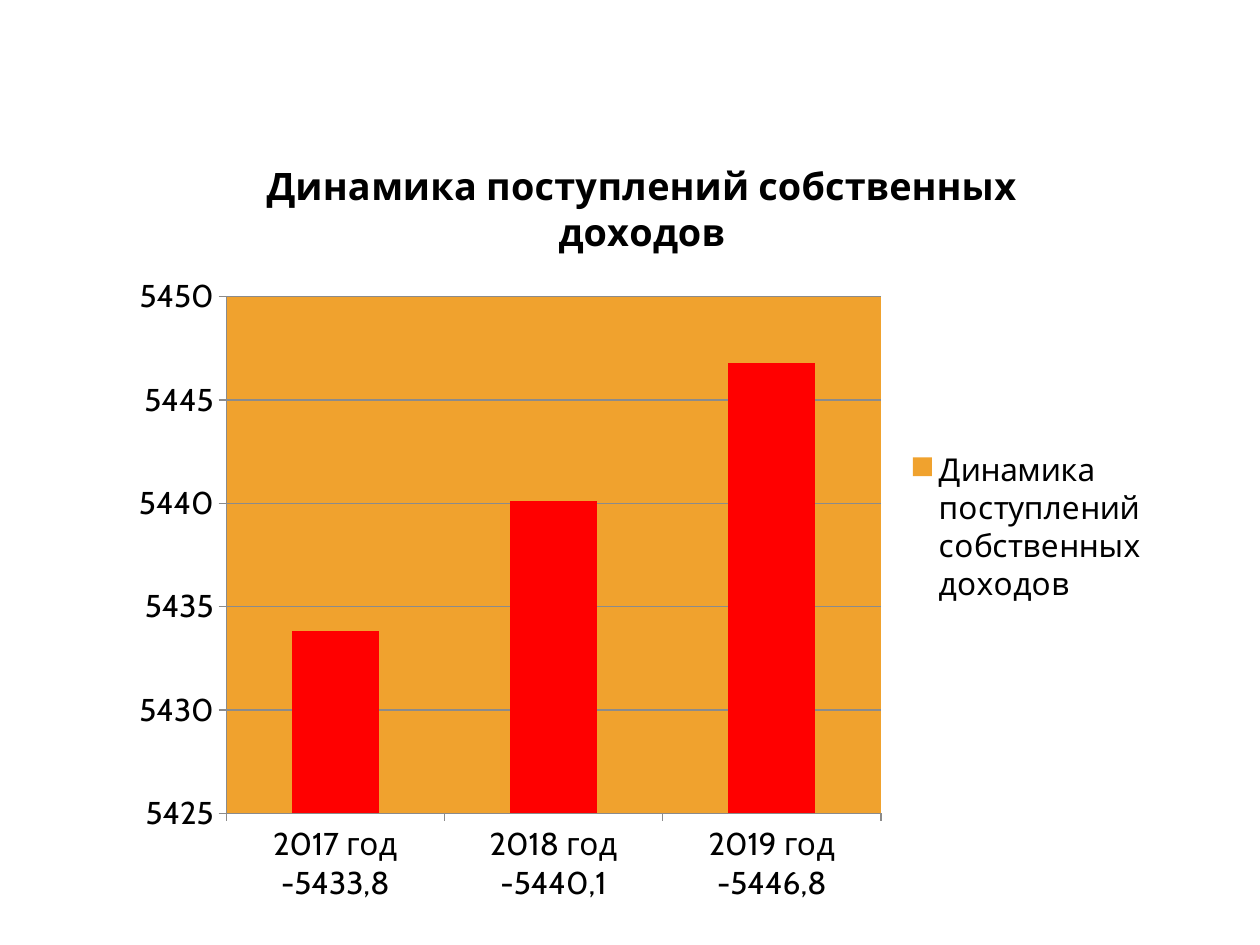
from lxml.etree import SubElement
from pptx import Presentation
from pptx.chart.data import CategoryChartData
from pptx.dml.color import RGBColor
from pptx.enum.chart import XL_CHART_TYPE as ChartType
from pptx.enum.chart import XL_LEGEND_POSITION as LegendPosition
from pptx.enum.chart import XL_TICK_MARK as TickMark
from pptx.oxml import parse_xml
from pptx.oxml.ns import nsdecls, qn
from pptx.util import Inches, Pt

BLACK = RGBColor(0x00, 0x00, 0x00)
RED = RGBColor(0xFF, 0x00, 0x00)
ORANGE = RGBColor(0xF0, 0xA2, 0x2E)
GRAY = RGBColor(0x8B, 0x8B, 0x8B)
FONT_NAME = "Cabin"
TITLE = "Динамика поступлений собственных доходов"
INCOME = {"2017 год": 5433.8, "2018 год": 5440.1, "2019 год": 5446.8}
PLOT_LAYOUT = {"x": 0.1, "y": 0.21, "w": 0.63, "h": 0.65}


def style_font(font, size, bold=False):
    font.name = FONT_NAME
    font.size = Pt(size)
    font.bold = bold
    font.color.rgb = BLACK


def fill_solid(target, color):
    target.format.fill.solid()
    target.format.fill.fore_color.rgb = color


def style_title(chart):
    chart.has_title = True
    chart.chart_title.include_in_layout = False
    paragraph = chart.chart_title.text_frame.paragraphs[0]
    paragraph.text = TITLE
    style_font(paragraph.font, 21.6, bold=True)


def style_axis(axis):
    axis.major_tick_mark = TickMark.OUTSIDE
    axis.minor_tick_mark = TickMark.NONE
    axis.format.line.color.rgb = GRAY
    style_font(axis.tick_labels.font, 18)


def style_axes(chart):
    style_axis(chart.category_axis)
    value_axis = chart.value_axis
    style_axis(value_axis)
    value_axis.minimum_scale = 5425
    value_axis.maximum_scale = 5450
    value_axis.major_unit = 5
    value_axis.has_major_gridlines = True
    value_axis.major_gridlines.format.line.color.rgb = GRAY


def style_legend(chart):
    chart.has_legend = True
    chart.legend.position = LegendPosition.RIGHT
    chart.legend.include_in_layout = False
    style_font(chart.legend.font, 18)


def style_columns(chart):
    plot = chart.plots[0]
    plot.gap_width = 150
    plot.overlap = 100
    plot.vary_by_categories = False
    series = plot.series[0]
    fill_solid(series, ORANGE)
    for index in range(len(INCOME)):
        fill_solid(series.points[index], RED)


def style_plot_area(chart):
    plot_area = chart._chartSpace.chart.plotArea
    for layout in plot_area.findall(qn("c:layout")):
        plot_area.remove(layout)
    layout = parse_xml(f"<c:layout {nsdecls('c')}><c:manualLayout/></c:layout>")
    settings = {"layoutTarget": "inner", "xMode": "edge", "yMode": "edge", **PLOT_LAYOUT}
    for name, value in settings.items():
        SubElement(layout[0], qn(f"c:{name}"), val=str(value))
    plot_area.insert(0, layout)
    plot_area.append(parse_xml(
        f"<c:spPr {nsdecls('c', 'a')}><a:solidFill>"
        f'<a:srgbClr val="{ORANGE}"/></a:solidFill></c:spPr>'
    ))


def add_income_chart(slide):
    data = CategoryChartData()
    data.categories = [
        f"{year} -{value}".replace(".", ",") for year, value in INCOME.items()
    ]
    data.add_series(TITLE, INCOME.values())
    frame = slide.shapes.add_chart(
        ChartType.COLUMN_STACKED,
        Inches(0.97), Inches(1.03), Inches(8.25), Inches(6.31), data,
    )
    chart = frame.chart
    style_font(chart.font, 18)
    style_title(chart)
    style_axes(chart)
    style_legend(chart)
    style_columns(chart)
    style_plot_area(chart)


def main():
    presentation = Presentation()
    presentation.slide_width = Inches(10)
    presentation.slide_height = Inches(7.5)
    slide = presentation.slides.add_slide(presentation.slide_layouts[6])
    add_income_chart(slide)
    presentation.save("out.pptx")


if __name__ == "__main__":
    main()
